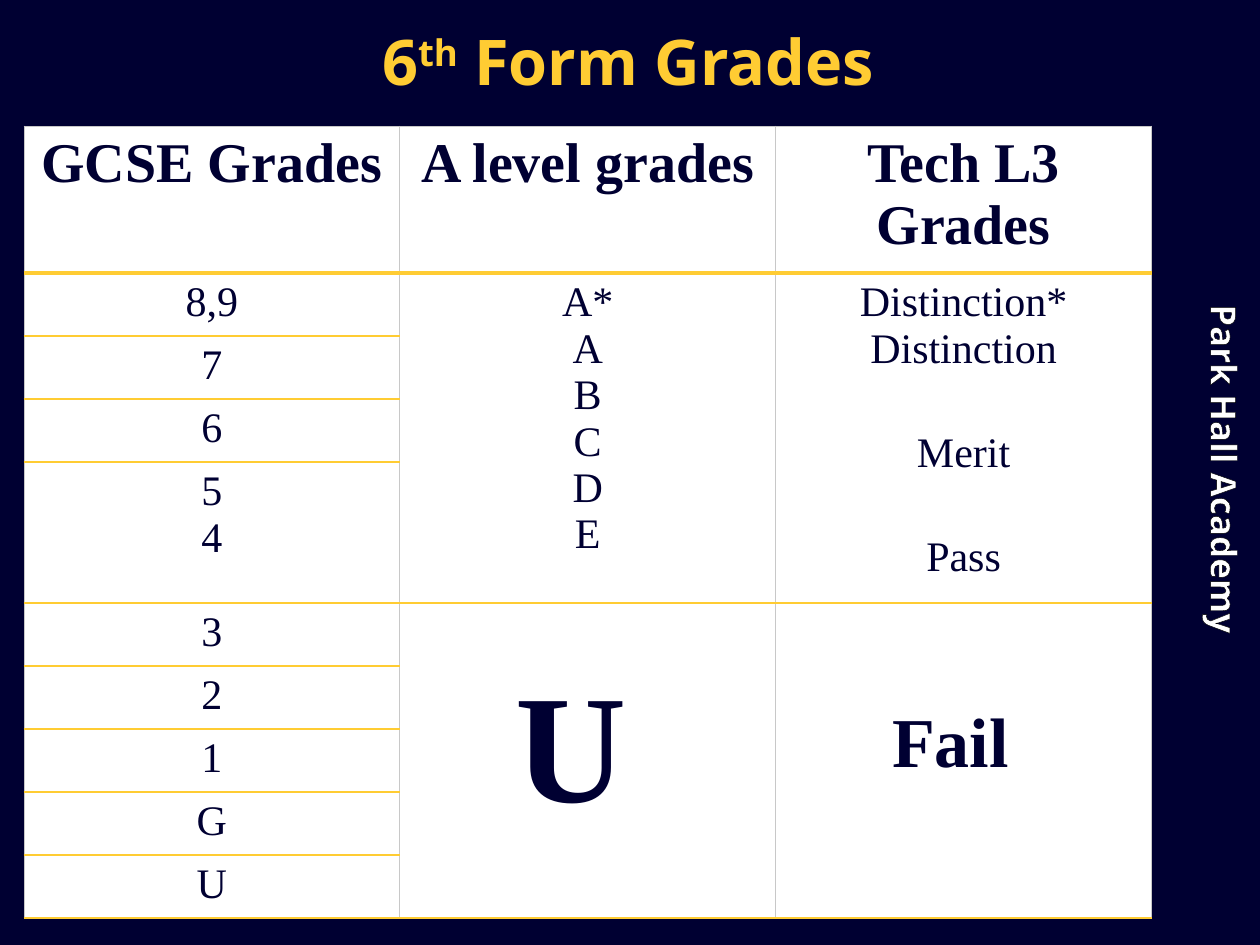
import pptx
import pptx.util
import pptx.dml.color
import pptx.enum.text
import lxml.etree
from pptx.oxml.ns import qn

Inches, Pt = pptx.util.Inches, pptx.util.Pt
RGB = pptx.dml.color.RGBColor.from_string
CENTER = pptx.enum.text.PP_ALIGN.CENTER
MIDDLE = pptx.enum.text.MSO_ANCHOR.MIDDLE

THEME = dict(navy="000032", gold="FFCC33", white="FFFFFF", black="000000", grid="C8C8C8",
             sans="Noto Sans", serif="Times New Roman",
             title=36, side=20, header=32, body=24, ungraded=88, fail=40)

TITLE = [("6", 0), ("th", 30), (" Form Grades", 0)]
SIDE = "Park Hall Academy"
HEADERS = ["GCSE Grades", "A level grades", "Tech L3 Grades"]
GCSE = [["8,9"], ["7"], ["6"], ["5", "4"], ["3"], ["2"], ["1"], ["G"], ["U"]]
A_LEVEL = ["A*", "A", "B", "C", "D", "E"]
VOCATIONAL = [("Distinction*", 0), ("Distinction", 0), ("Merit", 33), ("Pass", 33)]
PASS_ROWS, FAIL_ROWS = (1, 4), (5, 9)
ROW_COUNT, ROW_HEIGHT = 1 + len(GCSE), 0.41


def add_text(p, text, size=THEME["body"], font=THEME["serif"], color=THEME["navy"],
             bold=False, baseline=0, outline=None, before=0):
    p.alignment = CENTER
    if before:
        p.space_before = Pt(before)
    r = p.add_run()
    r.text = text
    r.font.size, r.font.name, r.font.bold = Pt(size), font, bold
    r.font.color.rgb = RGB(color)
    props = r.font._element
    if baseline:
        props.set("baseline", str(baseline * 1000))
    if outline:
        props.insert(0, make_line("a:ln", outline, 0.75))


def make_line(tag, color, width):
    ln = lxml.etree.Element(qn(tag), w=str(int(Pt(width))))
    fill = lxml.etree.SubElement(ln, qn("a:solidFill"))
    lxml.etree.SubElement(fill, qn("a:srgbClr"), val=color)
    return ln


def fill_cell(cell, lines, **fmt):
    tf = cell.text_frame
    for i, line in enumerate(lines):
        text, before = line if isinstance(line, tuple) else (line, 0)
        p = tf.add_paragraph() if i else tf.paragraphs[0]
        add_text(p, text, before=before, **fmt)


def edge_below(row, col):
    if row < 0:
        return THEME["grid"], 0.5
    if row == 0:
        return THEME["gold"], 3
    if col == 0 or row in (PASS_ROWS[1], FAIL_ROWS[1]):
        return THEME["gold"], 1
    return THEME["white"], 1


def add_borders(cell, row, col):
    tcPr = cell._tc.get_or_add_tcPr()
    last = row
    for first, end in (PASS_ROWS, FAIL_ROWS):
        if col and row == first:
            last = end
    side = THEME["grid"], 0.5
    edges = [("a:lnL", side), ("a:lnR", side),
             ("a:lnT", edge_below(row - 1, col)), ("a:lnB", edge_below(last, col))]
    for i, (tag, (color, width)) in enumerate(edges):
        tcPr.insert(i, make_line(tag, color, width))


def add_title(s):
    sp = s.shapes.title
    sp.left, sp.top, sp.width, sp.height = map(Inches, (0.74, 0.11, 8.49, 0.74))
    tf = sp.text_frame
    tf.vertical_anchor = MIDDLE
    tf.auto_size = pptx.enum.text.MSO_AUTO_SIZE.NONE
    for text, baseline in TITLE:
        add_text(tf.paragraphs[0], text, size=THEME["title"], font=THEME["sans"],
                 color=THEME["gold"], bold=True, baseline=baseline)


def add_side_label(s):
    sp = s.shapes.add_textbox(*map(Inches, (6.77, 3.4, 5.69, 0.64)))
    sp.rotation = 90
    tf = sp.text_frame
    tf.word_wrap = False
    add_text(tf.paragraphs[0], SIDE, size=THEME["side"], font=THEME["sans"],
             color=THEME["white"], bold=True, outline=THEME["black"])


def add_grades(s):
    frame = s.shapes.add_table(ROW_COUNT, len(HEADERS), *map(Inches, (0.19, 1, 8.95, 6.17)))
    table = frame.table
    table.first_row = table.horz_banding = False
    for row in table.rows:
        row.height = Inches(ROW_HEIGHT)
    frame.height = Inches(6.17)
    for r in range(ROW_COUNT):
        for c in range(len(HEADERS)):
            cell = table.cell(r, c)
            cell.fill.solid()
            cell.fill.fore_color.rgb = RGB(THEME["white"])
            add_borders(cell, r, c)
    for first, last in (PASS_ROWS, FAIL_ROWS):
        for c in (1, 2):
            table.cell(first, c).merge(table.cell(last, c))
    for c, header in enumerate(HEADERS):
        fill_cell(table.cell(0, c), [header], size=THEME["header"], bold=True)
    for r, grades in enumerate(GCSE, 1):
        fill_cell(table.cell(r, 0), grades)
    fill_cell(table.cell(PASS_ROWS[0], 1), A_LEVEL)
    fill_cell(table.cell(PASS_ROWS[0], 2), VOCATIONAL)
    for c, text, size, top, right in ((1, "U", THEME["ungraded"], 0.5, 0.37),
                                      (2, "Fail", THEME["fail"], 0.81, 0.31)):
        cell = table.cell(FAIL_ROWS[0], c)
        cell.margin_top, cell.margin_right = Inches(top), Inches(right)
        fill_cell(cell, [text], size=size, bold=True)


def main():
    prs = pptx.Presentation()
    prs.slide_width, prs.slide_height = Inches(10), Inches(7.5)
    s = prs.slides.add_slide(prs.slide_layouts[5])
    s.background.fill.solid()
    s.background.fill.fore_color.rgb = RGB(THEME["navy"])
    add_side_label(s)
    add_title(s)
    add_grades(s)
    prs.save("out.pptx")


if __name__ == "__main__":
    main()
